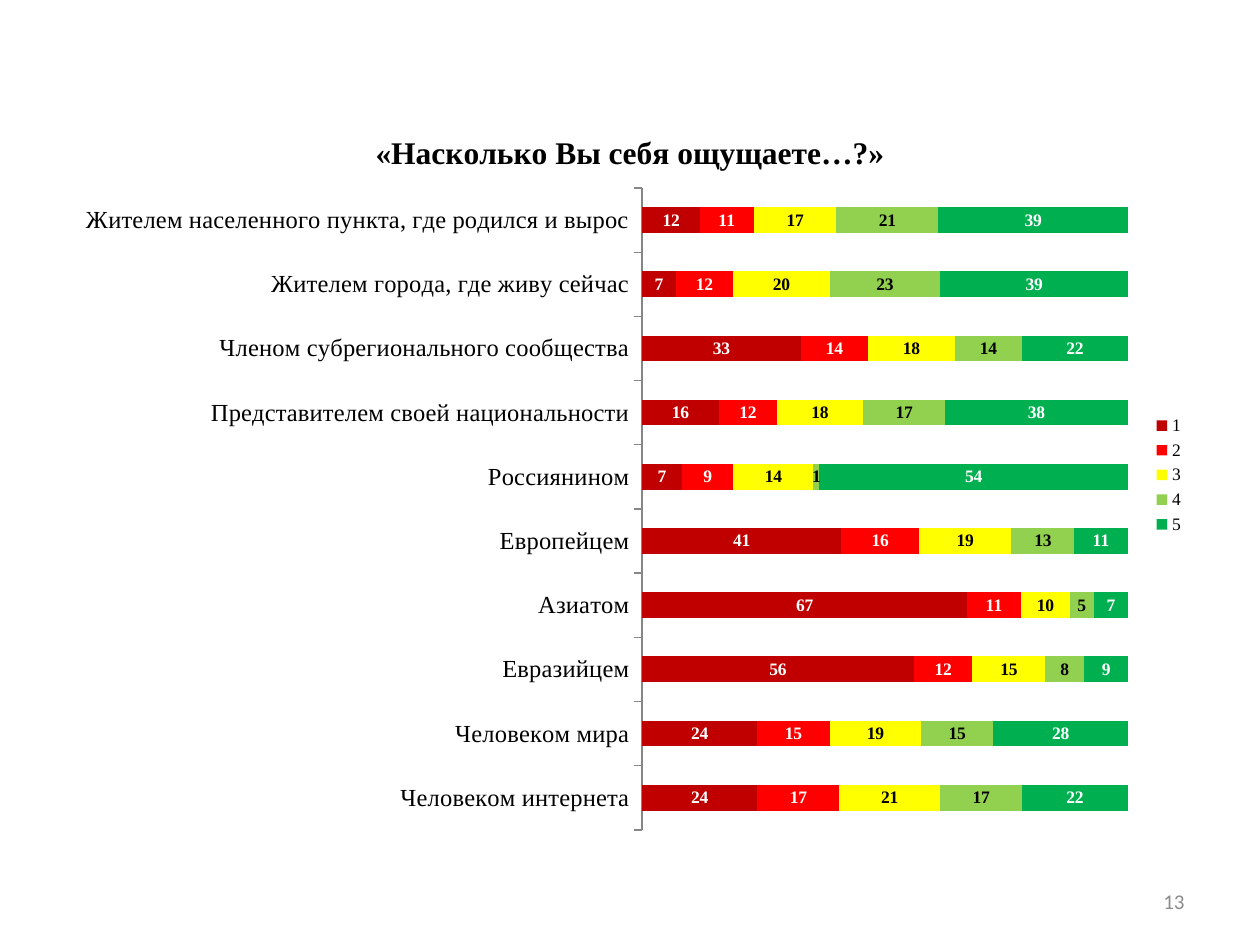
from dataclasses import dataclass

from lxml import etree
from pptx import Presentation
from pptx import util as u
from pptx.chart.chart import Chart
from pptx.chart.data import CategoryChartData
from pptx.dml.color import RGBColor
from pptx.enum import chart as charts
from pptx.enum import text
from pptx.oxml.ns import qn

PX_PER_INCH = 126


@dataclass(frozen=True)
class Theme:
    serif: str = "Times New Roman"
    sans: str = "Calibri"
    black: str = "000000"
    white: str = "FFFFFF"
    axis: str = "868686"
    muted: str = "8C8C8C"
    title_size: int = 18
    category_size: int = 14
    number_size: int = 12
    chart_size: int = 10


@dataclass(frozen=True)
class Box:
    left: int
    top: int
    width: int
    height: int

    def emu(self) -> list[u.Emu]:
        return [px(n) for n in (self.left, self.top, self.width, self.height)]


@dataclass(frozen=True)
class Rating:
    name: str
    color: str
    label_color: str
    values: tuple[int, ...]


THEME = Theme()
PAGE = Box(0, 0, 1260, 945)
CHART = Box(63, 106, 1134, 738)
PLOT = Box(642, 188, 486, 642)
NUMBER = Box(903, 876, 294, 50)

CATEGORIES = (
    "Жителем населенного пункта, где родился и вырос",
    "Жителем города, где живу сейчас",
    "Членом субрегионального сообщества",
    "Представителем своей национальности",
    "Россиянином",
    "Европейцем",
    "Азиатом",
    "Евразийцем",
    "Человеком мира",
    "Человеком интернета",
)
RATINGS = (
    Rating("1", "C00000", THEME.white, (12, 7, 33, 16, 7, 41, 67, 56, 24, 24)),
    Rating("2", "FF0000", THEME.white, (11, 12, 14, 12, 9, 16, 11, 12, 15, 17)),
    Rating("3", "FFFF00", THEME.black, (17, 20, 18, 18, 14, 19, 10, 15, 19, 21)),
    Rating("4", "92D050", THEME.black, (21, 23, 14, 17, 1, 13, 5, 8, 15, 17)),
    Rating("5", "00B050", THEME.white, (39, 39, 22, 38, 54, 11, 7, 9, 28, 22)),
)


def px(length: int) -> u.Emu:
    return u.Emu(round(length * 914400 / PX_PER_INCH))


def style(font, size: int, color: str, face: str, bold: bool = False) -> None:
    font.size = u.Pt(size)
    font.name = face
    font.bold = bold
    font.color.rgb = RGBColor.from_string(color)


def place_plot(chart: Chart, plot: Box, frame: Box) -> None:
    area = chart.element.find(".//" + qn("c:plotArea"))
    for old in area.findall(qn("c:layout")):
        area.remove(old)
    layout = etree.Element(qn("c:layout"))
    manual = etree.SubElement(layout, qn("c:manualLayout"))
    settings = {
        "layoutTarget": "inner",
        "xMode": "edge",
        "yMode": "edge",
        "x": (plot.left - frame.left) / frame.width,
        "y": (plot.top - frame.top) / frame.height,
        "w": plot.width / frame.width,
        "h": plot.height / frame.height,
    }
    for name, value in settings.items():
        etree.SubElement(manual, qn(f"c:{name}")).set("val", str(value))
    area.insert(0, layout)


def style_series(series, rating: Rating) -> None:
    series.format.fill.solid()
    series.format.fill.fore_color.rgb = RGBColor.from_string(rating.color)
    labels = series.data_labels
    labels.show_value = True
    labels.number_format = "0"
    labels.number_format_is_linked = False
    style(labels.font, THEME.chart_size, rating.label_color, THEME.serif, True)


def add_ratings_chart(page, title: str) -> None:
    table = CategoryChartData(number_format="0")
    table.categories = CATEGORIES
    for rating in RATINGS:
        table.add_series(rating.name, rating.values)
    chart = page.shapes.add_chart(
        charts.XL_CHART_TYPE.BAR_STACKED_100, *CHART.emu(), table
    ).chart
    style(chart.font, THEME.chart_size, THEME.black, THEME.serif)

    chart.has_title = True
    heading = chart.chart_title.text_frame
    heading.text = title
    style(heading.paragraphs[0].runs[0].font, THEME.title_size, THEME.black, THEME.serif, True)

    chart.has_legend = True
    chart.legend.position = charts.XL_LEGEND_POSITION.RIGHT
    chart.legend.include_in_layout = False

    bars = chart.plots[0]
    bars.gap_width = 150
    bars.overlap = 100
    bars.vary_by_categories = False
    for series, rating in zip(bars.series, RATINGS):
        style_series(series, rating)

    axis = chart.category_axis
    axis.reverse_order = True
    axis.major_tick_mark = charts.XL_TICK_MARK.OUTSIDE
    axis.format.line.color.rgb = RGBColor.from_string(THEME.axis)
    style(axis.tick_labels.font, THEME.category_size, THEME.black, THEME.serif)
    chart.value_axis.visible = False
    chart.value_axis.has_major_gridlines = False
    place_plot(chart, PLOT, CHART)


def add_page_number(page, number: str) -> None:
    frame = page.shapes.add_textbox(*NUMBER.emu()).text_frame
    frame.word_wrap = True
    frame.vertical_anchor = text.MSO_ANCHOR.MIDDLE
    para = frame.paragraphs[0]
    para.text = number
    para.alignment = text.PP_ALIGN.RIGHT
    style(para.runs[0].font, THEME.number_size, THEME.muted, THEME.sans)


def main() -> None:
    deck = Presentation()
    deck.slide_width, deck.slide_height = px(PAGE.width), px(PAGE.height)
    page = deck.slides.add_slide(deck.slide_layouts[6])
    add_ratings_chart(page, "«Насколько Вы себя ощущаете…?»")
    add_page_number(page, "13")
    deck.save("out.pptx")


if __name__ == "__main__":
    main()
